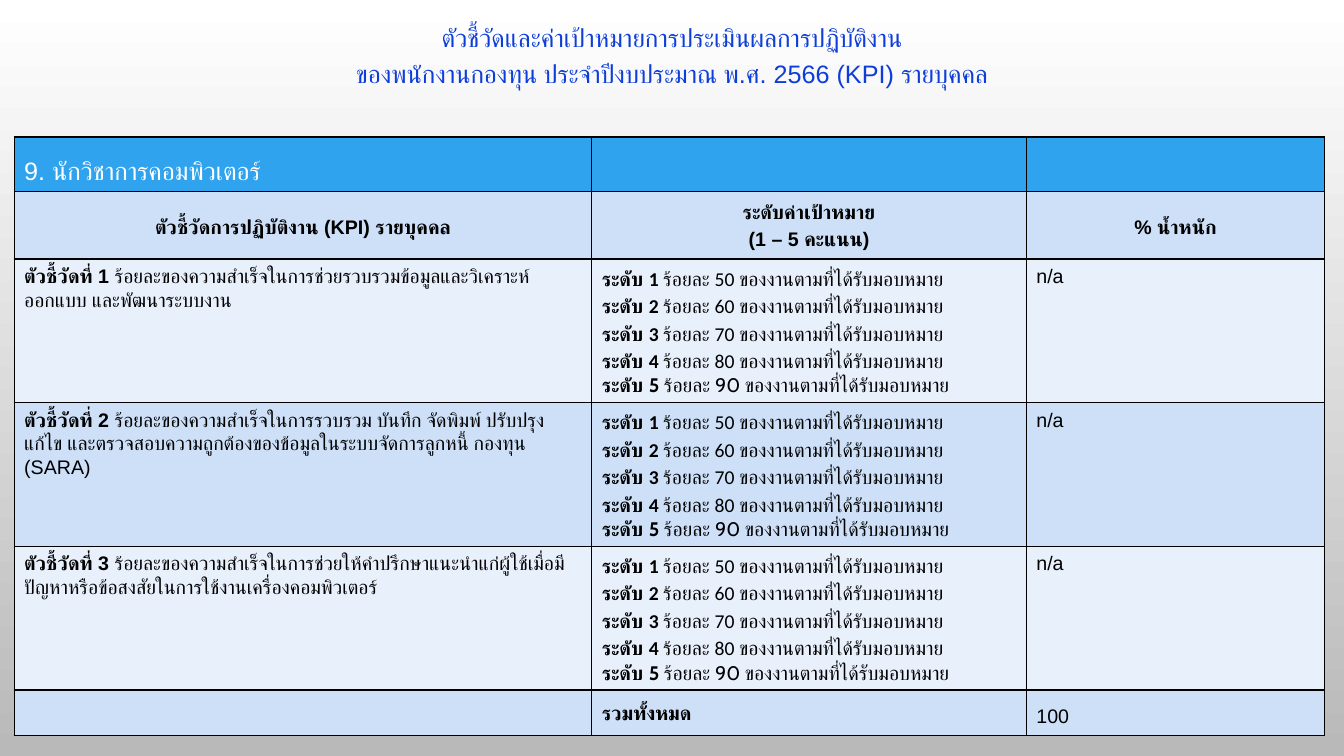
from lxml import etree
from pptx import Presentation
from pptx import util as u
from pptx.dml.color import RGBColor
from pptx.enum import text
from pptx.oxml.ns import qn

BLUE, PALE, PALER, BLACK, WHITE = "2FA3EE", "CDE0F8", "E8F0FC", "000000", "FFFFFF"
CENTER = text.PP_ALIGN.CENTER
MIDDLE = text.MSO_ANCHOR.MIDDLE


def color(value):
    return RGBColor.from_string(value)


class Sheet:
    """One slide, measured in hundredths of its width (columns) and height (rows)."""

    def __init__(self, width, height):
        self.deck = Presentation()
        self.deck.slide_width, self.deck.slide_height = u.Inches(width), u.Inches(height)
        self.page = self.deck.slides.add_slide(self.deck.slide_layouts[5])

    def across(self, columns):
        return round(self.deck.slide_width * columns / 100)

    def down(self, rows):
        return round(self.deck.slide_height * rows / 100)

    def background(self, top, bottom):
        fill = self.page.background.fill
        fill.gradient()
        fill.gradient_angle = 270
        for stop, value in zip(fill.gradient_stops, (top, bottom)):
            stop.color.rgb = color(value)

    def fill_text(self, frame, lines, size=14, ink=BLACK, align=None, spacing=None, font="Arial"):
        """Each line is a list of (wording, bold) spans; spacing and font may be one per line."""
        for index, line in enumerate(lines):
            para = frame.paragraphs[0] if index == 0 else frame.add_paragraph()
            para.alignment = align
            para.line_spacing = spacing[index] if isinstance(spacing, list) else spacing
            para.font.name = font[index] if isinstance(font, list) else font
            para.font.size = u.Pt(size)
            para.font.color.rgb = color(ink)
            for wording, bold in line:
                span = para.add_run()
                span.text = wording
                span.font.bold = bold

    def title(self, left, top, width, height, lines, **style):
        box = self.page.shapes.title
        box.left, box.top = self.across(left), self.down(top)
        box.width, box.height = self.across(width), self.down(height)
        frame = box.text_frame
        frame.word_wrap = True
        frame.auto_size = text.MSO_AUTO_SIZE.NONE
        frame.vertical_anchor = text.MSO_ANCHOR.TOP
        self.fill_text(frame, lines, **style)

    def table(self, left, top, columns, rows):
        frame = self.page.shapes.add_table(
            len(rows), len(columns), self.across(left), self.down(top),
            self.across(sum(columns)), self.down(sum(rows)))
        grid = frame.table
        grid.first_row = grid.horz_banding = False
        for column, width in zip(grid.columns, columns):
            column.width = self.across(width)
        for row, height in zip(grid.rows, rows):
            row.height = self.down(height)
        return grid

    def cell(self, cell, fill, lines=(), anchor=None, **style):
        self.border(cell)
        cell.fill.solid()
        cell.fill.fore_color.rgb = color(fill)
        cell.vertical_anchor = anchor
        self.fill_text(cell.text_frame, lines, **style)

    def border(self, cell):
        properties = cell._tc.get_or_add_tcPr()
        for side in ("a:lnL", "a:lnR", "a:lnT", "a:lnB"):
            line = etree.SubElement(properties, qn(side), w=str(u.Pt(1)))
            paint = etree.SubElement(line, qn("a:solidFill"))
            etree.SubElement(paint, qn("a:srgbClr"), val=BLACK)


HEADINGS = [
    ["ตัวชี้วัดการปฏิบัติงาน (KPI) รายบุคคล"],
    ["ระดับค่าเป้าหมาย", "(1 – 5 คะแนน)"],
    ["% น้ำหนัก"],
]
INDICATORS = [
    "ร้อยละของความสำเร็จในการช่วยรวบรวมข้อมูลและวิเคราะห์ ออกแบบ และพัฒนาระบบงาน",
    "ร้อยละของความสำเร็จในการรวบรวม บันทึก จัดพิมพ์ ปรับปรุง แก้ไข "
    "และตรวจสอบความถูกต้องของข้อมูลในระบบจัดการลูกหนี้ กองทุน (SARA)",
    "ร้อยละของความสำเร็จในการช่วยให้คำปรึกษาแนะนำแก่ผู้ใช้เมื่อมีปัญหา"
    "หรือข้อสงสัยในการใช้งานเครื่องคอมพิวเตอร์",
]
LEVELS = [
    [(f"ระดับ {level} ", True), (f"ร้อยละ {40 + 10 * level} ของงานตามที่ได้รับมอบหมาย", False)]
    for level in range(1, 6)
]


def main():
    sheet = Sheet(13.33, 7.5)
    sheet.background(WHITE, "B9B9B9")
    sheet.title(0, 1.47, 100, 16.4, [
        [("ตัวชี้วัดและค่าเป้าหมายการประเมินผลการปฏิบัติงาน", False)],
        [("ของพนักงานกองทุน ประจำปีงบประมาณ พ.ศ. 2566 (KPI) รายบุคคล", False)],
    ], size=18, ink="0E3EDA", align=CENTER, spacing=1.2)

    grid = sheet.table(1.05, 18.13, [42.98, 32.33, 22.2], [7.2, 8.93] + [18.8] * 3 + [6])
    banner = [[[("9. นักวิชาการคอมพิวเตอร์", False)]], [], []]
    for column, (lines, heading) in enumerate(zip(banner, HEADINGS)):
        sheet.cell(grid.cell(0, column), BLUE, lines, MIDDLE, size=18, ink=WHITE, spacing=1.5)
        sheet.cell(grid.cell(1, column), PALE, [[(line, True)] for line in heading],
                   MIDDLE, align=CENTER, spacing=1.2)

    for number, indicator in enumerate(INDICATORS, 1):
        row, fill = number + 1, PALER if number % 2 else PALE
        sheet.cell(grid.cell(row, 0), fill,
                   [[(f"ตัวชี้วัดที่ {number} ", True), (indicator, False)]], spacing=u.Pt(16.8))
        sheet.cell(grid.cell(row, 1), fill, LEVELS,
                   spacing=[1.15] * 4 + [1.0], font=["Calibri"] * 4 + ["Cabin"])
        sheet.cell(grid.cell(row, 2), fill, [[("n/a", False)]], spacing=u.Pt(16.8))

    totals = [[], [[("รวมทั้งหมด", True)]], [[("100", False)]]]
    for column, lines in enumerate(totals):
        sheet.cell(grid.cell(5, column), PALE, lines, spacing=1.5)
    sheet.deck.save("out.pptx")


if __name__ == "__main__":
    main()
